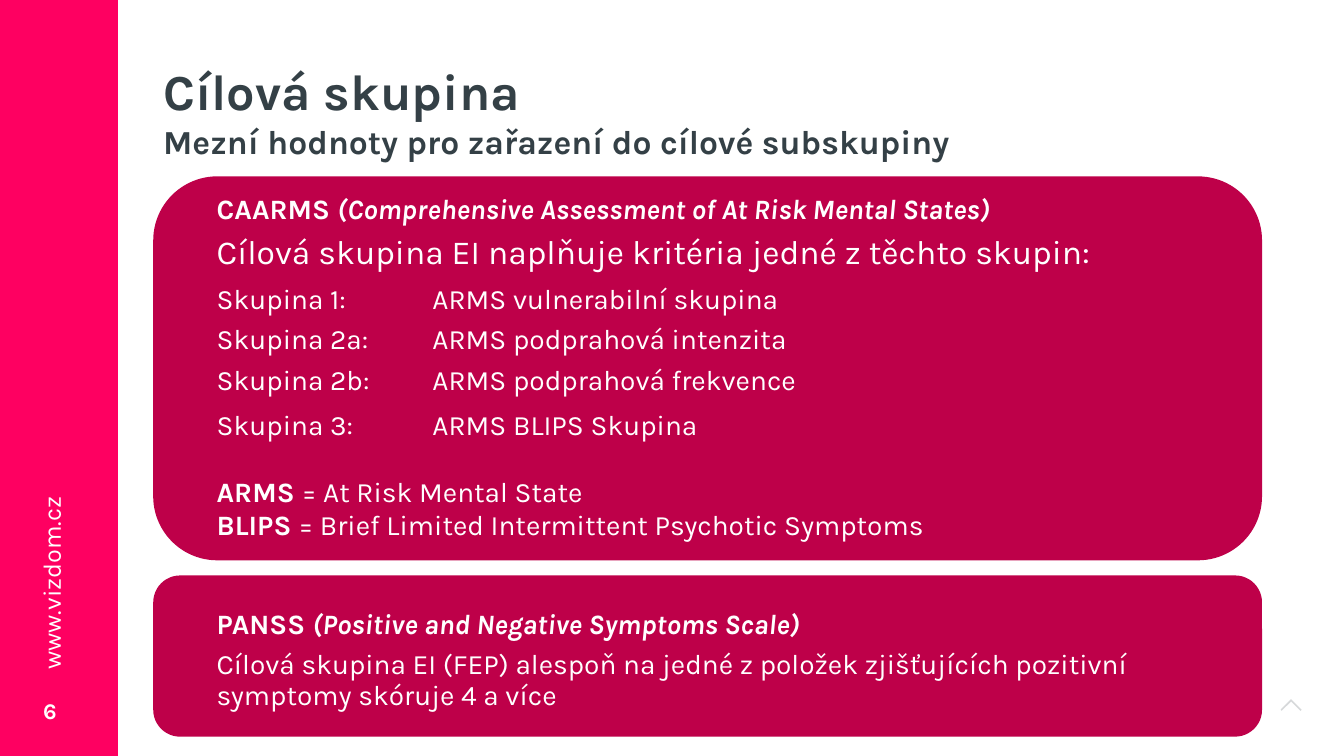
from lxml import etree
from pptx import Presentation, util as u
from pptx.dml.color import RGBColor
from pptx.enum import shapes, text
from pptx.oxml.ns import qn

COLORS = {"band": "FE0061", "panel": "BE0049", "ink": "344046", "white": "FFFFFF"}
CELL = u.Inches(13.33) / 160
SPACED = {"line_spacing": 0.9, "space_after": u.Pt(7.5)}
GROUPS = [
    "Skupina 1: \tARMS vulnerabilní skupina",
    "Skupina 2a: \tARMS podprahová intenzita",
    "Skupina 2b: \tARMS podprahová frekvence",
]
CAARMS = [
    ([("CAARMS ", {"bold": True}),
      ("(Comprehensive Assessment of At Risk Mental States)", {"bold": True, "italic": True})], SPACED),
    ([("Cílová skupina EI naplňuje kritéria jedné z těchto skupin:", {"size": u.Pt(24)})],
     {"line_spacing": 0.9, "space_after": u.Pt(9)}),
    *[([(line, {})], SPACED) for line in GROUPS],
    ([("Skupina 3: \tARMS BLIPS Skupina", {})], {}),
    ([("ARMS ", {"bold": True}), ("= At Risk Mental State", {})], {"space_before": u.Pt(24)}),
    ([("BLIPS ", {"bold": True}), ("= Brief Limited Intermittent Psychotic Symptoms", {})], {}),
]
PANSS = [
    ([("PANSS ", {"bold": True}),
      ("(Positive and Negative Symptoms Scale)", {"bold": True, "italic": True})], SPACED),
    ([("Cílová skupina EI (FEP) alespoň na jedné z položek zjišťujících pozitivní "
       "symptomy skóruje 4 a více", {})], SPACED),
]


def grid(*cells):
    """Turn grid columns and rows into lengths."""
    return [u.Emu(round(c * CELL)) for c in cells]


def apply(obj, values):
    """Set each attribute named in a dict."""
    for name, value in values.items():
        setattr(obj, name, value)


def paint(sp, color):
    """Give a shape a plain fill without line or shadow."""
    sp.shadow.inherit = False
    sp.fill.solid()
    sp.fill.fore_color.rgb = RGBColor.from_string(COLORS[color])
    sp.line.fill.background()
    return sp


def write(sp, paragraphs, color, size, frame, tab=None):
    """Fill a shape with left-aligned formatted paragraphs."""
    tf = sp.text_frame
    apply(tf, {"word_wrap": True, **frame})
    for i, (runs, spacing) in enumerate(paragraphs):
        p = tf.paragraphs[0] if i == 0 else tf.add_paragraph()
        if tab and "\t" in runs[0][0]:
            tabs = etree.SubElement(p._p.get_or_add_pPr(), qn("a:tabLst"))
            etree.SubElement(tabs, qn("a:tab"), pos=str(tab), algn="l")
        apply(p, {"alignment": text.PP_ALIGN.LEFT, **spacing})
        for words, style in runs:
            r = p.add_run()
            r.text = words
            apply(r.font, {"name": "Karla", "size": u.Pt(size), "bold": False, "italic": False, **style})
            r.font.color.rgb = RGBColor.from_string(COLORS[color])


def sidebar(s, x, y, w, h):
    """Draw the side band with the web address and page number."""
    band = s.shapes.add_shape(shapes.MSO_SHAPE.RECTANGLE, *grid(x, y, w, h))
    paint(band, "band")
    number = s.shapes.add_textbox(*grid(x + 3.96, y + 81, 6, 7.2))
    write(number, [([("6", {"bold": True})], {})], "white", 16,
          {"vertical_anchor": text.MSO_ANCHOR.MIDDLE})
    address = s.shapes.add_textbox(*grid(x - 8.16, y + 64.2, 28.56, 4.92))
    address.rotation = 270
    write(address, [([("www.vizdom.cz", {})], {})], "white", 18, {})


def heading(s, x, y, w, h):
    """Place the title and its subtitle."""
    sp = s.shapes.add_textbox(*grid(x, y, w, h))
    write(sp, [([("Cílová skupina", {"bold": True})], {}),
               ([("Mezní hodnoty pro zařazení do cílové subskupiny",
                  {"bold": True, "size": u.Pt(24)})], {})], "ink", 36, {})


def panel(s, x, y, w, h, top, inner, paragraphs):
    """Draw a rounded panel with its inset text block."""
    group = s.shapes.add_group_shape()
    paint(group.shapes.add_shape(shapes.MSO_SHAPE.ROUNDED_RECTANGLE, *grid(x, y, w, h)), "panel")
    sp = group.shapes.add_shape(shapes.MSO_SHAPE.RECTANGLE,
                                *grid(x + 6.48, y + top, w - 12.84, inner))
    paint(sp, "panel")
    margins = {f"margin_{side}": u.Inches(0.09) for side in ("left", "top", "right", "bottom")}
    write(sp, paragraphs, "white", 20,
          {"vertical_anchor": text.MSO_ANCHOR.MIDDLE, **margins}, u.Inches(2.14))


def chevron(s, x, y, w, h):
    """Draw the faint upward chevron."""
    outline = [(0.5, 0), (1, 0.9), (0.95, 1), (0.5, 0.2), (0.05, 1), (0, 0.9)]
    points = [grid(x + w * px, y + h * py) for px, py in outline]
    builder = s.shapes.build_freeform(*points[0])
    builder.add_line_segments(points[1:], close=True)
    sp = paint(builder.convert_to_shape(), "ink")
    color = sp.fill._xPr.find(qn("a:solidFill"))[0]
    etree.SubElement(color, qn("a:alpha"), val="20000")


def main():
    """Build and save the slide."""
    prs = Presentation()
    apply(prs, {"slide_width": u.Inches(13.33), "slide_height": u.Inches(7.5)})
    s = prs.slides.add_slide(prs.slide_layouts[6])
    chevron(s, 152.45, 83.25, 2.5, 1.4)
    sidebar(s, 0, 0, 14.04, 91.08)
    heading(s, 18.24, 6.6, 111.24, 21.36)
    panel(s, 18.24, 68.52, 132, 19.2, 2.52, 15.24, PANSS)
    panel(s, 18.24, 21, 132, 45.72, 1.8, 42.12, CAARMS)
    prs.save("out.pptx")


if __name__ == "__main__":
    main()
